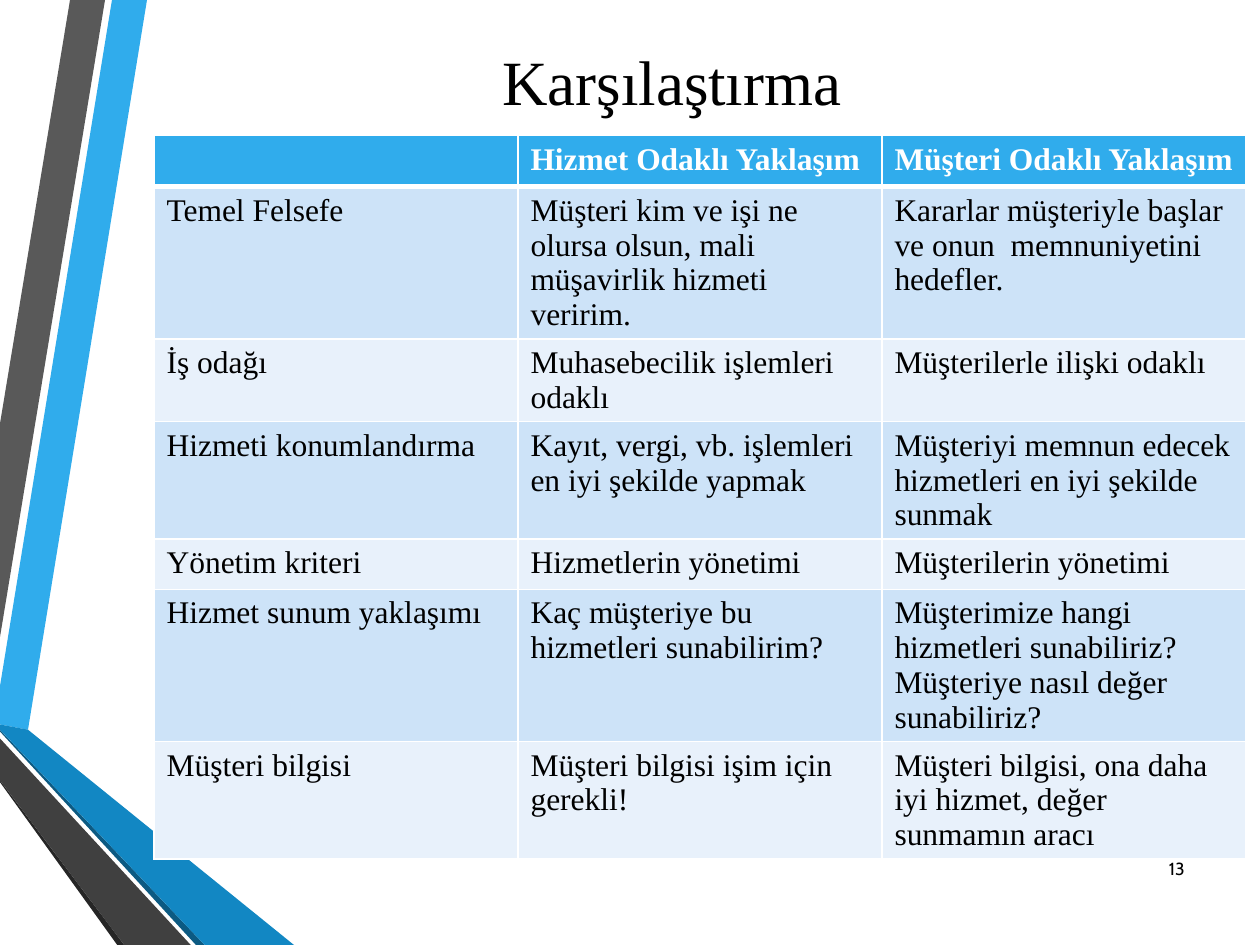
from lxml import etree
from pptx import Presentation
from pptx import util as u
from pptx.dml.color import RGBColor
from pptx.enum import text
from pptx.oxml import ns

WIDTH, HEIGHT = 720, 540
SERIF = "Times New Roman"

# Ribbon outlines from back to front: fill, corner points
RIBBONS = [
    ("30ACEC", [(0, 392), (0, 414), (16, 417), (84, 0), (64, 0)]),
    ("595959", [(60, 0), (40, 0), (0, 242), (0, 364)]),
    ("262626", [(0, 446), (0, 447), (67, 540), (71, 540)]),
    ("0C5A82", [(0, 417), (0, 418), (112, 540), (117, 540)]),
    ("1287C3", [(0, 417), (117, 540), (168, 540), (16, 417), (0, 414)]),
    ("404040", [(0, 446), (71, 540), (109, 540), (0, 422)]),
]

ROWS = [
    ("", "Hizmet Odaklı Yaklaşım", "Müşteri Odaklı Yaklaşım"),
    ("Temel Felsefe",
     "Müşteri kim ve işi ne olursa olsun, mali müşavirlik hizmeti veririm.",
     "Kararlar müşteriyle başlar ve onun  memnuniyetini hedefler."),
    ("İş odağı", "Muhasebecilik işlemleri odaklı", "Müşterilerle ilişki odaklı"),
    ("Hizmeti konumlandırma",
     "Kayıt, vergi, vb. işlemleri en iyi şekilde yapmak",
     "Müşteriyi memnun edecek hizmetleri en iyi şekilde sunmak"),
    ("Yönetim kriteri", "Hizmetlerin yönetimi", "Müşterilerin yönetimi"),
    ("Hizmet sunum yaklaşımı",
     "Kaç müşteriye bu hizmetleri sunabilirim?",
     "Müşterimize hangi hizmetleri sunabiliriz? Müşteriye nasıl değer sunabiliriz?"),
    ("Müşteri bilgisi",
     "Müşteri bilgisi işim için gerekli!",
     "Müşteri bilgisi, ona daha iyi hizmet, değer sunmamın aracı"),
]
ROW_HEIGHTS = [28.8, 87, 47.3, 67, 28.8, 87, 67]


def color(hex_string):
    return RGBColor.from_string(hex_string)


def write(tf, content, size=18, font=SERIF, fill="000000", bold=False,
          align=text.PP_ALIGN.LEFT):
    p = tf.paragraphs[0]
    p.alignment = align
    r = p.add_run()
    r.text = content
    r.font.size, r.font.name, r.font.bold = u.Pt(size), font, bold
    r.font.color.rgb = color(fill)


def add_border(cell, side, width, fill):
    """Side is L, R, T or B; call before the cell gets its fill."""
    ln = etree.SubElement(cell._tc.get_or_add_tcPr(), ns.qn(f"a:ln{side}"),
                          w=str(u.Pt(width)))
    solid = etree.SubElement(ln, ns.qn("a:solidFill"))
    etree.SubElement(solid, ns.qn("a:srgbClr"), val=fill)


class Deck:
    header, bands, rule = "30ACEC", ("E8F1FB", "CDE3F8"), "FFFFFF"

    def __init__(self):
        self.prs = Presentation()
        self.prs.slide_width, self.prs.slide_height = u.Pt(WIDTH), u.Pt(HEIGHT)
        self.s = self.prs.slides.add_slide(self.prs.slide_layouts[5])

    def ribbon(self, fill, points):
        builder = self.s.shapes.build_freeform(*points[0], scale=u.Pt(1))
        builder.add_line_segments(points[1:], close=True)
        sp = builder.convert_to_shape()
        sp.shadow.inherit = False
        sp.fill.solid()
        sp.fill.fore_color.rgb = color(fill)
        sp.line.fill.background()

    def title(self, content, left, top, width, height):
        sp = self.s.shapes.title
        sp.left, sp.top, sp.width, sp.height = map(u.Pt, (left, top, width, height))
        tf = sp.text_frame
        tf.vertical_anchor = text.MSO_ANCHOR.MIDDLE
        write(tf, content, size=36, align=text.PP_ALIGN.CENTER)

    def table(self, rows, heights, left, top, width):
        frame = self.s.shapes.add_table(len(rows), len(rows[0]), u.Pt(left), u.Pt(top),
                                        u.Pt(width), u.Pt(sum(heights)))
        table = frame.table
        table.horz_banding = False
        for i, (row, height) in enumerate(zip(rows, heights)):
            table.rows[i].height = u.Pt(height)
            for j, content in enumerate(row):
                self.cell(table.cell(i, j), content, i)

    def cell(self, cell, content, row):
        is_header = row == 0
        for side in "LRTB":
            thick = (is_header and side == "B") or (row == 1 and side == "T")
            add_border(cell, side, 3 if thick else 1, self.rule)
        cell.fill.solid()
        cell.fill.fore_color.rgb = color(self.header if is_header else self.bands[row % 2])
        if content:
            write(cell.text_frame, content, bold=is_header,
                  fill="FFFFFF" if is_header else "000000")

    def page_number(self, content, left, top, width, height):
        sp = self.s.shapes.add_textbox(*map(u.Pt, (left, top, width, height)))
        tf = sp.text_frame
        tf.word_wrap = True
        tf.vertical_anchor = text.MSO_ANCHOR.MIDDLE
        write(tf, content, size=10, font="Cabin", align=text.PP_ALIGN.RIGHT)


def main():
    deck = Deck()
    for fill, points in RIBBONS:
        deck.ribbon(fill, points)
    deck.title("Karşılaştırma", 60, 21, 648, 50)
    deck.table(ROWS, ROW_HEIGHTS, 88, 77.5, 624)
    deck.page_number("13", 651.5, 481.5, 32.5, 29)
    deck.prs.save("out.pptx")


if __name__ == "__main__":
    main()
